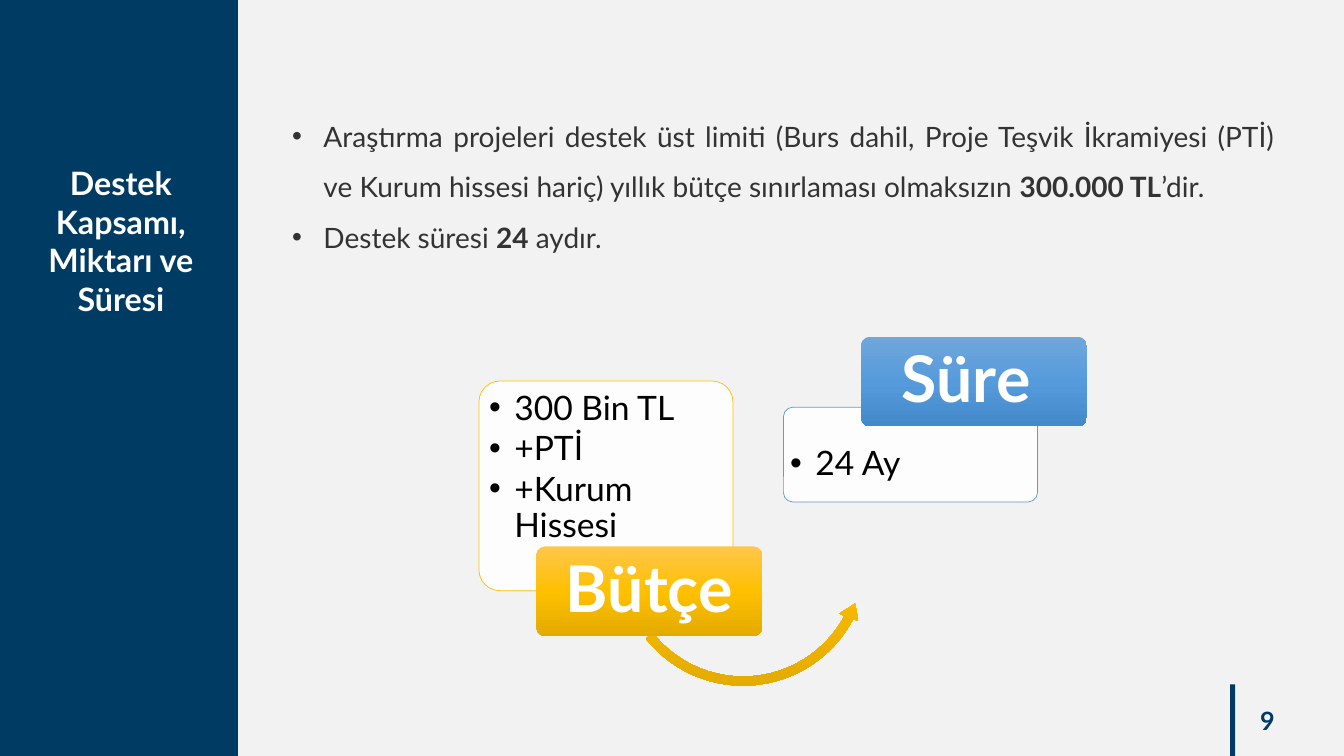
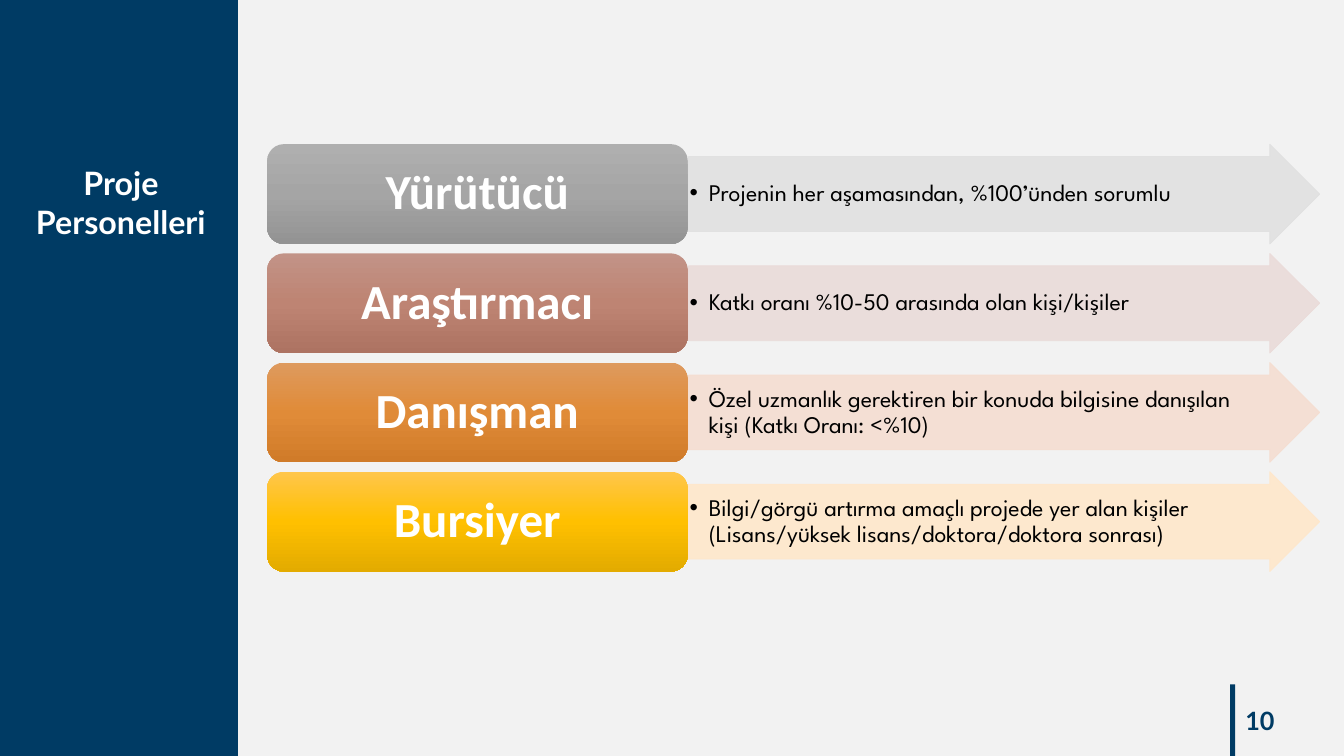
from copy import deepcopy

from lxml import etree
from pptx import Presentation
from pptx.dml.color import RGBColor
from pptx.enum import shapes, text
from pptx.oxml import ns
from pptx.util import Inches, Pt

# Colours
NAVY = RGBColor(0x00, 0x3B, 0x64)
PAPER = RGBColor(0xF2, 0xF2, 0xF2)
INK = RGBColor(0x33, 0x33, 0x33)
BLACK = RGBColor(0, 0, 0)
WHITE = RGBColor(0xFF, 0xFF, 0xFF)
GOLD = [RGBColor(0xFF, 0xC6, 0x4B), RGBColor(0xFF, 0xC0, 0x00), RGBColor(0xE3, 0xAB, 0x00)]
BLUE = [RGBColor(0x71, 0xA6, 0xDB), RGBColor(0x55, 0x9B, 0xDB), RGBColor(0x44, 0x8A, 0xCA)]
GREY = [RGBColor(0xAF, 0xAF, 0xAF), RGBColor(0xA5, 0xA5, 0xA5), RGBColor(0x93, 0x93, 0x93)]
ROSE = [RGBColor(0xC2, 0x93, 0x87), RGBColor(0xBE, 0x84, 0x73), RGBColor(0xAD, 0x73, 0x62)]
RUST = [RGBColor(0xDE, 0x9A, 0x5E), RGBColor(0xE0, 0x8B, 0x38), RGBColor(0xD0, 0x7B, 0x29)]
ASH = RGBColor(0xE1, 0xE1, 0xE1)
BLUSH = RGBColor(0xEA, 0xDB, 0xD9)
PEACH = RGBColor(0xF5, 0xDE, 0xD1)
CREAM = RGBColor(0xFF, 0xE7, 0xCB)
EDGE = RGBColor(0x5B, 0x9B, 0xD5)

# Fonts
LATO, CALIBRI, SPARTAN = "Lato", "Calibri", "League Spartan"

KIND = shapes.MSO_SHAPE
ALIGN = text.PP_ALIGN
TOP, MIDDLE = text.MSO_ANCHOR.TOP, text.MSO_ANCHOR.MIDDLE


def add_shape(slide, kind, box, fill, adj=(), edge=None, alpha=None):
    """Add a preset shape; a list of colours gives a vertical gradient."""
    shape = slide.shapes.add_shape(kind, *map(Inches, box))
    shape.shadow.inherit = False
    for i, value in enumerate(adj):
        shape.adjustments[i] = value
    if isinstance(fill, list):
        shape.fill.gradient()
        shape.fill.gradient_angle = 270
        first = shape.element.spPr.find(".//" + ns.qn("a:gs"))
        first.addnext(deepcopy(first))
        for stop, color, pos in zip(shape.fill.gradient_stops, fill, (0, 0.5, 1)):
            stop.color.rgb = color
            stop.position = pos
    else:
        shape.fill.solid()
        shape.fill.fore_color.rgb = fill
    if alpha:
        tone = shape.element.spPr.find(".//" + ns.qn("a:srgbClr"))
        etree.SubElement(tone, ns.qn("a:alpha"), val=str(alpha * 1000))
    if edge is None:
        shape.line.fill.background()
    else:
        shape.line.color.rgb = edge
        shape.line.width = Pt(0.5)
    return shape


def write(shape, paras, font, size, color, bold=False, align=ALIGN.LEFT, anchor=TOP,
          pads=(0.1, 0.05, 0.1, 0.05), lead=1.0, after=0, hang=0):
    """Fill a shape with paragraphs, each a list of (words, bold) runs or a string."""
    frame = shape.text_frame
    frame.word_wrap = True
    frame.vertical_anchor = anchor
    (frame.margin_left, frame.margin_top,
     frame.margin_right, frame.margin_bottom) = map(Inches, pads)
    for i, runs in enumerate(paras):
        para = frame.paragraphs[0] if i == 0 else frame.add_paragraph()
        if hang:
            props = para._p.get_or_add_pPr()
            props.set("marL", str(Inches(hang)))
            props.set("indent", str(-Inches(hang)))
            etree.SubElement(props, ns.qn("a:buFont"), typeface="Arial")
            etree.SubElement(props, ns.qn("a:buChar"), char="•")
        para.alignment = align
        para.line_spacing = lead
        para.space_after = Pt(after)
        for words, strong in [(runs, bold)] if isinstance(runs, str) else runs:
            run = para.add_run()
            run.text = words
            run.font.name = font
            run.font.size = Pt(size)
            run.font.bold = strong
            run.font.color.rgb = color


def add_text(slide, box, paras, *args, **style):
    write(slide.shapes.add_textbox(*map(Inches, box)), paras, *args, **style)


def add_base(deck, title, page):
    """Slide with side band, title and page number."""
    slide = deck.slides.add_slide(deck.slide_layouts[6])
    add_shape(slide, KIND.RECTANGLE, (0, 0, 2.36, 7.5), NAVY)
    add_shape(slide, KIND.RECTANGLE, (12.2, 6.79, 0.05, 0.71), NAVY)
    add_text(slide, (9.74, 6.95, 3, 0.4), [str(page)], LATO, 18, NAVY,
             bold=True, align=ALIGN.RIGHT, anchor=MIDDLE)
    add_text(slide, (0.18, 1.57, 2.04, 1.88), [title], LATO, 23, WHITE,
             bold=True, align=ALIGN.CENTER)
    return slide


def add_card(slide, box, items, edge, anchor=TOP, drop=0.04):
    """White card with a bullet list."""
    card = add_shape(slide, KIND.ROUNDED_RECTANGLE, box, WHITE, [0.1], edge, 90)
    write(card, items, LATO, 24, BLACK, anchor=anchor, lead=0.9, after=3,
          hang=0.25, pads=(0.04, drop, 0.04, 0.04))


def add_label(slide, box, name, fill, font, size, adj=()):
    """Gradient label with a centred name."""
    label = add_shape(slide, KIND.ROUNDED_RECTANGLE, box, fill, adj)
    write(label, [name], font, size, WHITE, bold=True, align=ALIGN.CENTER,
          anchor=MIDDLE, lead=0.9)


def add_flow(slide, left, top):
    """Budget card leading to the duration card."""
    add_card(slide, (left, top + 0.44, 2.52, 2.08),
             ["300 Bin TL", "+PTİ", "+Kurum Hissesi"], GOLD[1])
    add_shape(slide, KIND.LEFT_CIRCULAR_ARROW, (left + 1.33, top + 0.94, 2.58, 2.58),
              GOLD, [0.035, 4.301, 16.721, 84.91, 0.04])
    add_label(slide, (left + 0.57, top + 2.08, 2.24, 0.89), "Bütçe", GOLD, LATO, 46, [0.1])
    add_card(slide, (left + 3.02, top + 0.7, 2.52, 0.94), ["24 Ay"], EDGE, MIDDLE, 0.24)
    add_label(slide, (left + 3.79, top, 2.24, 0.89), "Süre ", BLUE, LATO, 46, [0.1])


def add_role(slide, left, top, name, note, fill, tint):
    """One role: label, then an arrow with its description."""
    high, wide = 0.99, 4.17
    arrow = add_shape(slide, KIND.RIGHT_ARROW, (left + wide + 0.01, top, 6.26, high),
                      tint, [0.75, 0.5], tint, 90)
    write(arrow, [note], SPARTAN, 17, BLACK, anchor=MIDDLE, lead=0.9,
          hang=0.19, pads=(0.01, 0.01, 0.25, 0.01))
    add_label(slide, (left, top, wide, high), name, fill, CALIBRI, 35)


def add_scope(deck):
    slide = add_base(deck, "Destek Kapsamı, Miktarı ve Süresi", 9)
    points = [
        [("Araştırma projeleri destek üst limiti (Burs dahil, Proje Teşvik İkramiyesi (PTİ) "
          "ve Kurum hissesi hariç) yıllık bütçe sınırlaması olmaksızın ", False),
         ("300.000 TL", True), ("’dir.", False)],
        [("Destek süresi ", False), ("24", True), (" aydır.", False)],
    ]
    add_text(slide, (2.8, 0.97, 9.94, 1.56), points, LATO, 20, INK,
             align=ALIGN.JUSTIFY, lead=1.5, hang=0.31)
    add_flow(slide, 4.75, 3.34)


def add_staff(deck):
    slide = add_base(deck, "Proje Personelleri", 10)
    roles = [
        ("Yürütücü", "Projenin her aşamasından, %100’ünden sorumlu", GREY, ASH),
        ("Araştırmacı", "Katkı oranı %10-50 arasında olan kişi/kişiler", ROSE, BLUSH),
        ("Danışman", "Özel uzmanlık gerektiren bir konuda bilgisine danışılan kişi "
         "(Katkı Oranı: <%10)", RUST, PEACH),
        ("Bursiyer", "Bilgi/görgü artırma amaçlı projede yer alan kişiler "
         "(Lisans/yüksek lisans/doktora/doktora sonrası)", GOLD, CREAM),
    ]
    step = 3.25 / (len(roles) - 1)
    for i, role in enumerate(roles):
        add_role(slide, 2.65, 1.43 + i * step, *role)


def main():
    deck = Presentation()
    deck.slide_width, deck.slide_height = Inches(13.33), Inches(7.5)
    ground = deck.slide_master.background.fill
    ground.solid()
    ground.fore_color.rgb = PAPER
    add_scope(deck)
    add_staff(deck)
    deck.save("out.pptx")


if __name__ == "__main__":
    main()
